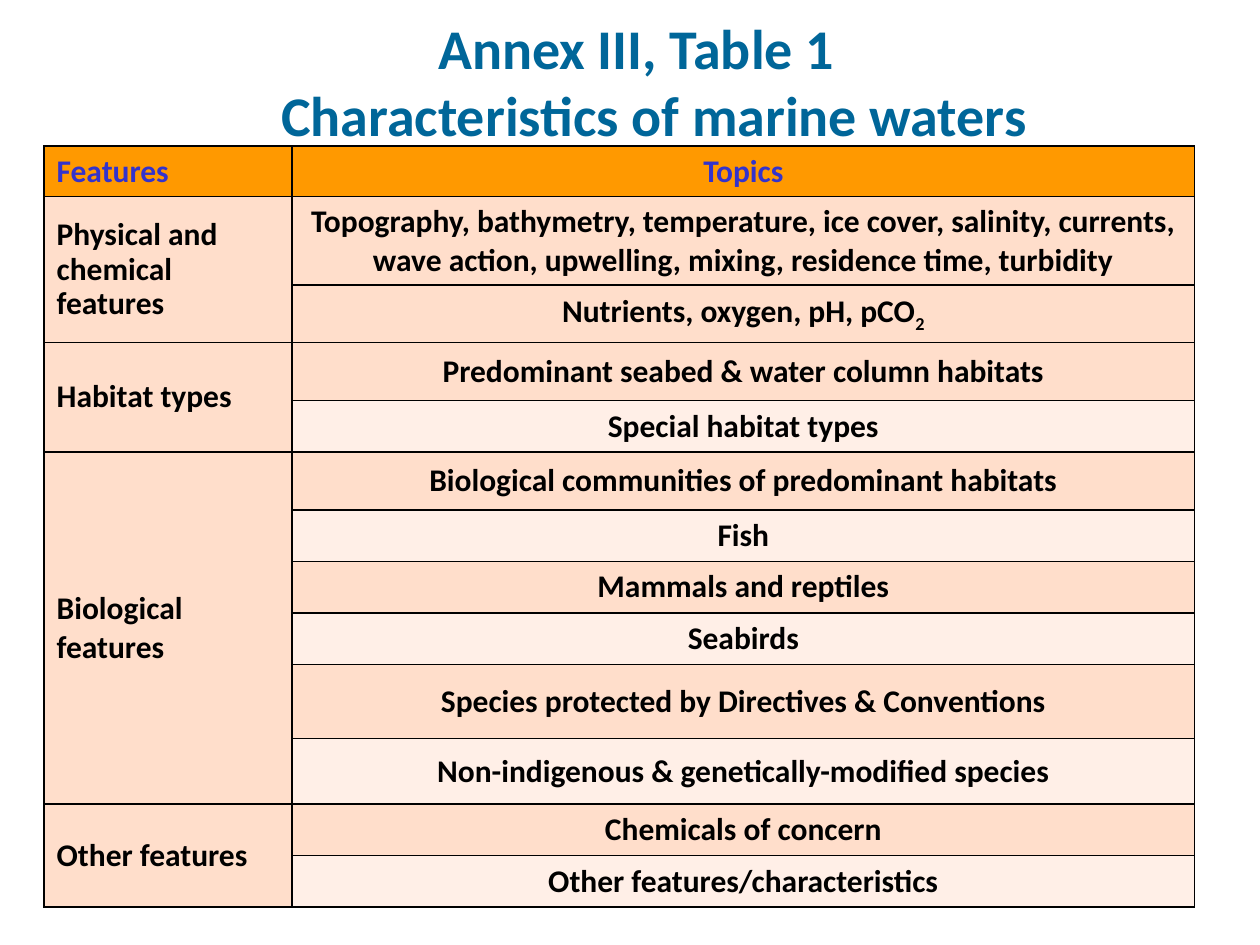
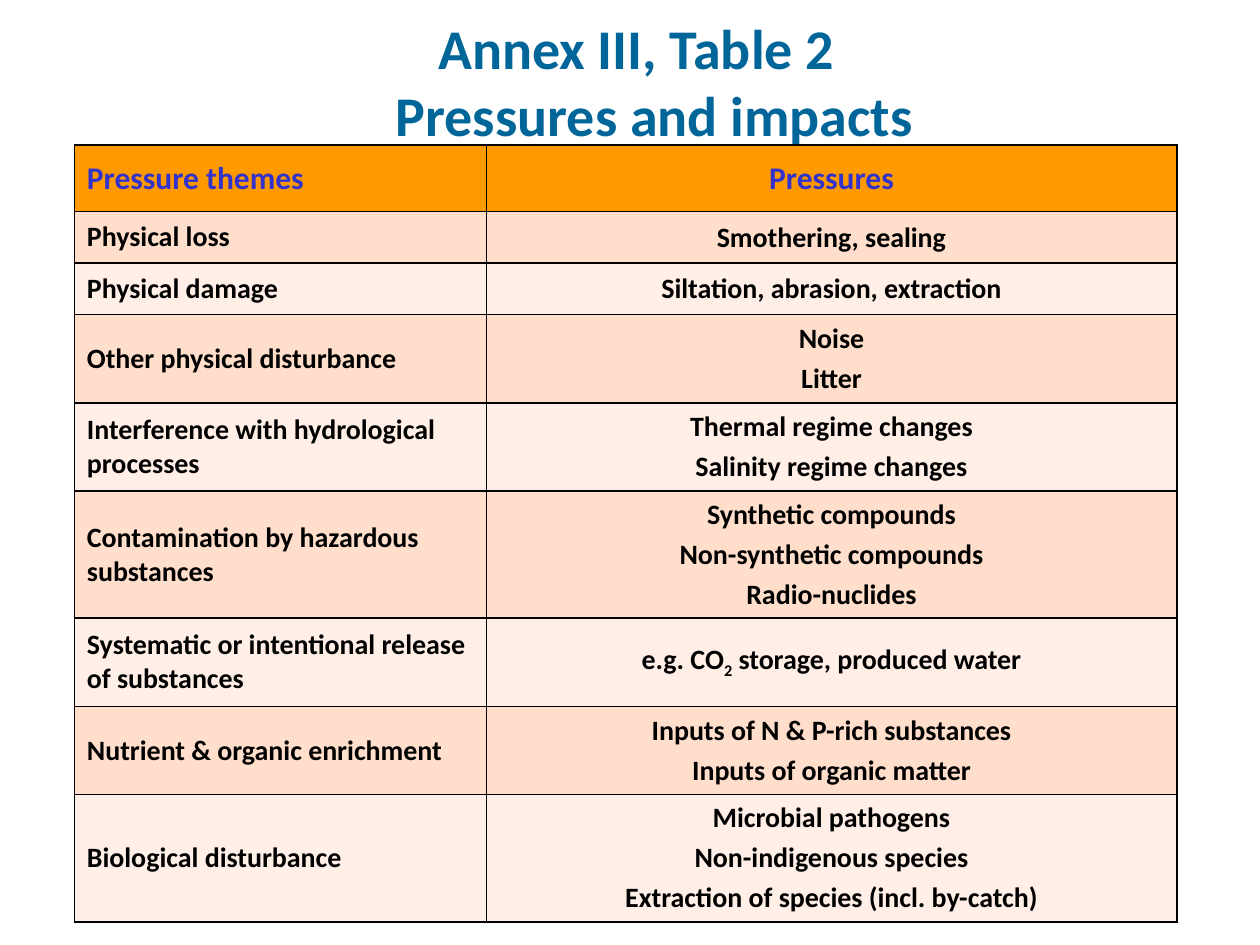
from dataclasses import dataclass

from lxml.etree import SubElement
from pptx import Presentation
from pptx.dml.color import RGBColor
from pptx.enum.text import MSO_ANCHOR, PP_ALIGN
from pptx.oxml.ns import qn
from pptx.util import Pt

FONT = "Calibri"
TITLE_BLUE = "006699"
HEADER_TEXT = "3333CC"
HEADER_FILL = "FF9900"
BLACK = "000000"
PEACH = "FFDECB"
PALE = "FFEFE7"
HEADER_SIZE = 18
SUBSCRIPT_MARK = "~"


@dataclass
class Row:
    height: float
    theme: str
    topics: str
    span: int = 1
    tight: bool = False
    fill: str = ""


@dataclass
class TableSlide:
    title: str
    left: float
    top: float
    widths: tuple[float, float]
    body_size: int
    rows: list[Row]


FEATURES = TableSlide(
    " Annex III, Table 1\vCharacteristics of marine waters", 25.2, 83.5, (141.8, 515.6), 18,
    [
        Row(28.8, "Features", "Topics"),
        Row(50.4, "Physical and chemical features",
            "Topography, bathymetry, temperature, ice cover, salinity, currents, "
            "wave action, upwelling, mixing, residence time, turbidity", 2, True),
        Row(33.1, "", "Nutrients, oxygen, pH, pCO~2", fill=PEACH),
        Row(33.1, "Habitat types", "Predominant seabed & water column habitats", 2, True),
        Row(29.4, "", "Special habitat types"),
        Row(33.1, "Biological features", "Biological communities of predominant habitats", 6),
        Row(29.4, "", "Fish"),
        Row(29.4, "", "Mammals and reptiles"),
        Row(29.4, "", "Seabirds"),
        Row(42.5, "", "Species protected by Directives & Conventions"),
        Row(37.4, "", "Non-indigenous & genetically-modified species"),
        Row(29.4, "Other features", "Chemicals of concern", 2),
        Row(29.4, "", "Other features/characteristics"),
    ],
)

PRESSURES = TableSlide(
    " Annex III, Table 2\vPressures and impacts", 42.5, 82.8, (235.4, 394.6), 16,
    [
        Row(38.2, "Pressure themes", "Pressures"),
        Row(29.4, "Physical loss", "Smothering, sealing", tight=True),
        Row(29.4, "Physical damage", "Siltation, abrasion, extraction"),
        Row(50.4, "Other physical disturbance", "Noise\nLitter"),
        Row(50.4, "Interference with hydrological processes",
            "Thermal regime changes\nSalinity regime changes"),
        Row(72.7, "Contamination by hazardous substances",
            "Synthetic compounds\nNon-synthetic compounds\nRadio-nuclides"),
        Row(50.4, "Systematic or intentional release of substances",
            "e.g. CO~2~ storage, produced water"),
        Row(50.4, "Nutrient & organic enrichment",
            "Inputs of N & P-rich substances\nInputs of organic matter"),
        Row(72.7, "Biological disturbance",
            "Microbial pathogens\nNon-indigenous species\n"
            "Extraction of species (incl. by-catch)"),
    ],
)


def rgb(color: str) -> RGBColor:
    return RGBColor.from_string(color)


def set_font(p, size: float, color: str) -> None:
    p.font.name = FONT
    p.font.size = Pt(size)
    p.font.bold = True
    p.font.color.rgb = rgb(color)


def add_title(s, text: str) -> None:
    tf = s.shapes.add_textbox(Pt(48), Pt(9.4), Pt(624), Pt(73.4)).text_frame
    tf.word_wrap = True
    tf.vertical_anchor = MSO_ANCHOR.MIDDLE
    p = tf.paragraphs[0]
    p.text = text
    p.alignment = PP_ALIGN.CENTER
    pPr = p._p.get_or_add_pPr()
    pPr.set("marL", str(Pt(28)))
    pPr.set("indent", str(Pt(-28)))
    set_font(p, 32, TITLE_BLUE)


def add_borders(cell) -> None:
    tcPr = cell._tc.get_or_add_tcPr()
    for side in ("lnL", "lnR", "lnT", "lnB"):
        line = SubElement(tcPr, qn(f"a:{side}"), w=str(Pt(1)))
        SubElement(SubElement(line, qn("a:solidFill")), qn("a:srgbClr"), val=BLACK)


def style_cell(cell, fill: str) -> None:
    add_borders(cell)
    cell.fill.solid()
    cell.fill.fore_color.rgb = rgb(fill)
    cell.vertical_anchor = MSO_ANCHOR.MIDDLE


def write_cell(cell, text: str, size: int, color: str, align: PP_ALIGN, tight: bool) -> None:
    tf = cell.text_frame
    for i, line in enumerate(text.split("\n")):
        p = tf.add_paragraph() if i else tf.paragraphs[0]
        p.alignment = align
        p.space_after = Pt(0.2 * size)
        if tight:
            p.line_spacing = 0.9
        set_font(p, size, color)
        for j, part in enumerate(line.split(SUBSCRIPT_MARK)):
            r = p.add_run()
            r.text = part
            if j % 2:
                r._r.get_or_add_rPr().set("baseline", "-25000")


def add_table(s, spec: TableSlide) -> None:
    rows = spec.rows
    table = s.shapes.add_table(
        len(rows), 2, Pt(spec.left), Pt(spec.top),
        Pt(sum(spec.widths)), Pt(sum(row.height for row in rows)),
    ).table
    for column, width in zip(table.columns, spec.widths):
        column.width = Pt(width)
    for i, row in enumerate(rows):
        table.rows[i].height = Pt(row.height)
        theme, topics = table.cell(i, 0), table.cell(i, 1)
        band = PEACH if i % 2 else PALE
        fill = row.fill or (band if i else HEADER_FILL)
        size, color = (spec.body_size, BLACK) if i else (HEADER_SIZE, HEADER_TEXT)
        style_cell(theme, fill)
        style_cell(topics, fill)
        write_cell(topics, row.topics, size, color, PP_ALIGN.CENTER, False)
        if row.theme:
            write_cell(theme, row.theme, size, color, PP_ALIGN.LEFT, row.tight)
        if row.span > 1:
            theme.merge(table.cell(i + row.span - 1, 0))


def main() -> None:
    prs = Presentation()
    prs.slide_width, prs.slide_height = Pt(720), Pt(540)
    for spec in (FEATURES, PRESSURES):
        s = prs.slides.add_slide(prs.slide_layouts[6])
        add_title(s, spec.title)
        add_table(s, spec)
    prs.save("out.pptx")


if __name__ == "__main__":
    main()
